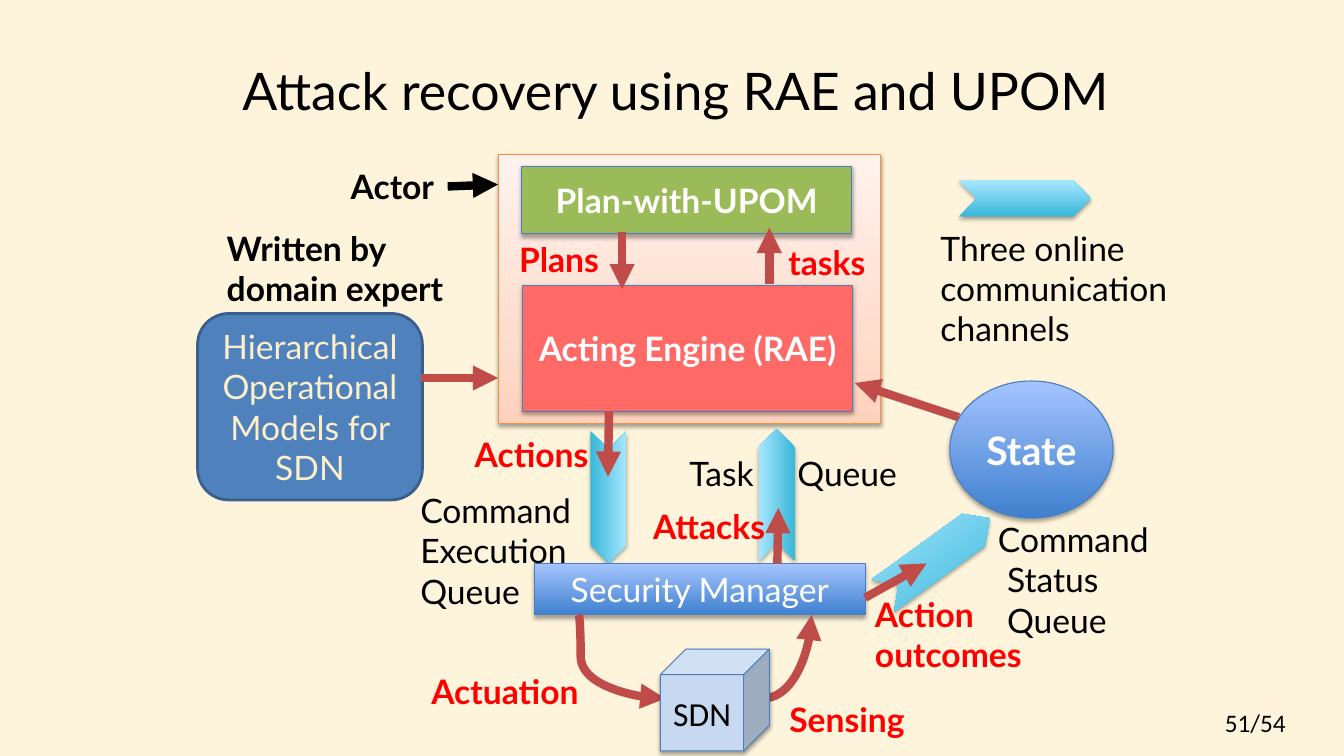
"""Build the slide on attack recovery with RAE and UPOM."""
from pptx import Presentation
from pptx.dml.color import RGBColor
from pptx.enum.shapes import MSO_CONNECTOR, MSO_SHAPE
from pptx.enum.text import MSO_ANCHOR, PP_ALIGN
from pptx.oxml import parse_xml
from pptx.oxml.ns import nsdecls
from pptx.util import Inches, Pt

RECT, OVAL, CUBE = MSO_SHAPE.RECTANGLE, MSO_SHAPE.OVAL, MSO_SHAPE.CUBE
ROUND, CHEVRON = MSO_SHAPE.ROUNDED_RECTANGLE, MSO_SHAPE.CHEVRON
STRAIGHT, CURVE = MSO_CONNECTOR.STRAIGHT, MSO_CONNECTOR.CURVE
LEFT, CENTER = PP_ALIGN.LEFT, PP_ALIGN.CENTER
TOP, MIDDLE = MSO_ANCHOR.TOP, MSO_ANCHOR.MIDDLE

BACKGROUND, CREAM, WHITE, BLACK = "FEF4DB", "FDEFCA", "FFFFFF", "000000"
RED, ARROW, EDGE = "FF0000", "BF4C48", "4B7EBC"
CYAN = [(0, "39B7D8"), (100, "A7E6FF")]
BLUE = [(0, "3F80CE"), (100, "A4C4FF")]
PEACH = [(0, "FFD2BD"), (35, "FFDED0"), (100, "FFF2ED")]

TITLE = ("Attack recovery using RAE and UPOM", (2.2, 0.27, 9, 1.25))
PAGE = ("51/54", (12.05, 6.97, 1.23, 0.4))

CHANNELS = [
    ((8.63, 5.33, 1.31, 0.39), 324.1),
    ((7.05, 4.73, 1.31, 0.36), 270),
    ((5.38, 4.75, 1.31, 0.36), 90),
    ((9.51, 1.79, 1.31, 0.36), 0),
]
BOXES = [
    (RECT, (4.94, 1.53, 3.79, 2.67), PEACH, "", dict(line="F69240")),
    (RECT, (5.17, 1.65, 3.28, 0.67), "9BBB59", "Plan-with-UPOM", dict(bold=True)),
    (RECT, (5.18, 2.83, 3.28, 1.25), "FF6966", "Acting Engine (RAE)", dict(bold=True)),
    (RECT, (5.3, 5.59, 3.28, 0.51), BLUE, "Security Manager", {}),
    (OVAL, (9.42, 3.78, 1.62, 1.36), BLUE, "State", dict(bold=True, size=28)),
    (ROUND, (1.96, 3.11, 2.23, 1.85), "4F81BD", "Hierarchical Operational Models for SDN",
     dict(line="3A5F8C", weight=2, color=CREAM, shadow=False)),
]
SDN = (CUBE, (6.55, 6.44, 1.08, 1.01), "C6D9F1", "SDN", dict(color=BLACK, font="Calibri"))
ARROWS = [
    ((6.04, 4.08), (6.03, 4.73), ARROW),
    ((7.71, 5.59), (7.72, 5.04), ARROW),
    ((4.18, 3.75), (4.94, 3.75), ARROW),
    ((9.51, 4.14), (8.48, 3.8), ARROW),
    ((8.58, 5.93), (9.19, 5.59), ARROW),
    ((4.44, 1.85), (4.94, 1.83), BLACK),
    ((7.63, 2.82), (7.63, 2.26), ARROW),
    ((6.17, 2.3), (6.17, 2.87), ARROW),
]
FLOW_LABELS = [
    ("Actuation", (4.18, 6.61, 2.11, 0.5)),
    ("Sensing", (7.73, 6.88, 1.81, 0.5)),
    ("Actions", (4.61, 4.26, 1.58, 0.5)),
    ("Attacks", (6.38, 4.97, 1.55, 0.5)),
    ("tasks", (7.72, 2.35, 1.55, 0.5)),
    ("Plans", (5.05, 2.32, 1.55, 0.5)),
    ("Action outcomes", (8.58, 5.84, 2.13, 0.91)),
]
NOTES = [
    ("Actor", (3.38, 1.6, 1.55, 0.5), dict(bold=True)),
    ("Written by domain expert", (2.15, 2.21, 2.45, 0.91), dict(bold=True)),
    ("Three online communication channels", (9.23, 2.21, 2.84, 1.31), {}),
    ("Task\tQueue", (6.74, 4.44, 2.84, 0.5), dict(tab=1.07)),
    ("Command Execution Queue", (4.07, 4.81, 1.81, 1.31), {}),
    ("Command Status Queue", (9.8, 5.1, 1.8, 1.31), dict(hang=0.09)),
]


def rgb(color):
    return RGBColor.from_string(color)


def xml(tag, body):
    return parse_xml(f'<a:{tag} {nsdecls("a")}{body}')


def write(tf, text, size=24, color=BLACK, bold=False, font="Lato",
          align=LEFT, anchor=TOP, tab=0, hang=0):
    tf.word_wrap = True
    tf.vertical_anchor = anchor
    p = tf.paragraphs[0]
    p.alignment = align
    pPr = p._p.get_or_add_pPr()
    if hang:
        pPr.set("marL", str(Inches(hang)))
        pPr.set("indent", str(-Inches(hang)))
    if tab:
        pPr.append(xml("tabLst", f'><a:tab pos="{Inches(tab)}" algn="l"/></a:tabLst>'))
    r = p.add_run()
    r.text = text
    r.font.size, r.font.bold, r.font.name = Pt(size), bold, font
    r.font.color.rgb = rgb(color)


def label(text, at, **fmt):
    write(s.shapes.add_textbox(*map(Inches, at)).text_frame, text, **fmt)


def shape(kind, at, fill, text="", line=EDGE, weight=0.75, shadow=True, color=WHITE, **fmt):
    sp = s.shapes.add_shape(kind, *map(Inches, at))
    sp.shadow.inherit = False
    if isinstance(fill, str):
        sp.fill.solid()
        sp.fill.fore_color.rgb = rgb(fill)
    else:
        stops = "".join(f'<a:gs pos="{pos * 1000}"><a:srgbClr val="{c}"/></a:gs>'
                        for pos, c in fill)
        sp._element.spPr.prstGeom.addnext(xml(
            "gradFill", f' rotWithShape="1"><a:gsLst>{stops}</a:gsLst>'
            '<a:lin ang="16200000" scaled="0"/></a:gradFill>'))
    if line:
        sp.line.color.rgb = rgb(line)
        sp.line.width = Pt(weight)
    else:
        sp.line.fill.background()
    if shadow:
        sp._element.spPr.find("{*}effectLst").append(xml(
            "outerShdw", f' blurRad="{Pt(3.1)}" dist="{Pt(1.8)}" dir="5400000" rotWithShape="0">'
            '<a:srgbClr val="000000"><a:alpha val="35000"/></a:srgbClr></a:outerShdw>'))
    if text:
        write(sp.text_frame, text, color=color, align=CENTER, anchor=MIDDLE, **fmt)
    return sp


def arrow(start, end, color=ARROW, kind=STRAIGHT):
    cx = s.shapes.add_connector(kind, *map(Inches, start + end))
    cx.line.color.rgb = rgb(color)
    cx.line.width = Pt(6)
    cx.line._get_or_add_ln().append(xml("tailEnd", ' type="triangle"/>'))
    cx._element.spPr.append(xml("effectLst", "/>"))
    return cx._element.spPr.prstGeom


prs = Presentation()
prs.slide_width, prs.slide_height = Inches(13.33), Inches(7.5)
s = prs.slides.add_slide(prs.slide_layouts[6])
s.background.fill.solid()
s.background.fill.fore_color.rgb = rgb(BACKGROUND)

label(*PAGE, size=18, font="Calibri")
for at, angle in CHANNELS:
    shape(CHEVRON, at, CYAN, line=None).rotation = angle
label(*TITLE, size=37, align=CENTER, anchor=MIDDLE)
for kind, at, fill, text, fmt in BOXES:
    shape(kind, at, fill, text, **fmt)

actuation = arrow((5.74, 6.1), (6.6, 6.93), kind=CURVE)
actuation.find("{*}avLst").append(xml("gd", ' name="adj1" fmla="val 2300"/>'))
sensing = arrow((7.56, 6.93), (8.05, 6.1), kind=CURVE)
sensing.set("prst", "curvedConnector2")
kind, at, fill, text, fmt = SDN
shape(kind, at, fill, text, **fmt)

for start, end, color in ARROWS:
    arrow(start, end, color)
for text, at in FLOW_LABELS:
    label(text, at, color=RED, bold=True)
for text, at, fmt in NOTES:
    label(text, at, **fmt)

prs.save("out.pptx")
